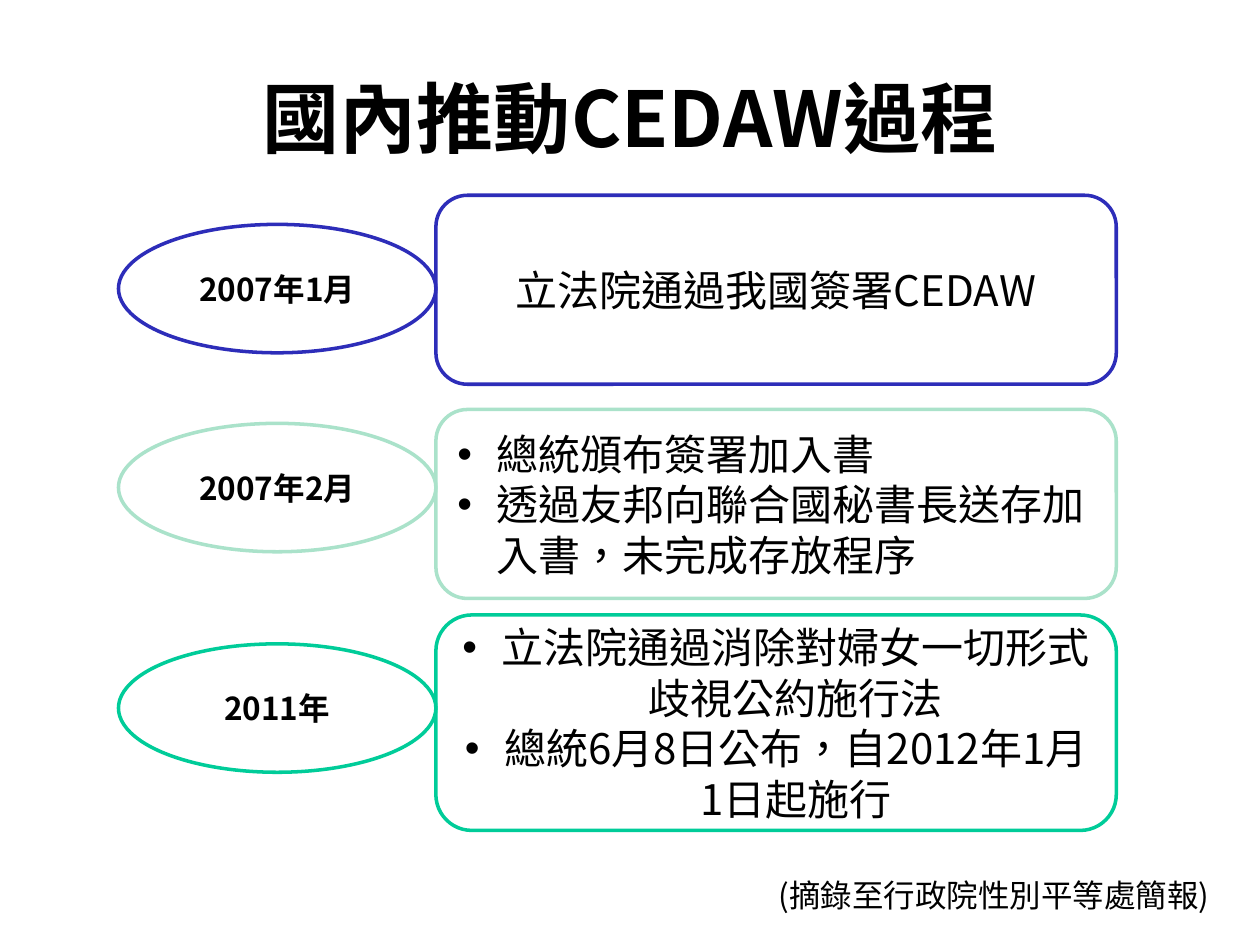
from dataclasses import dataclass

from lxml import etree
from pptx import Presentation
from pptx.dml.color import RGBColor
from pptx.enum.shapes import MSO_SHAPE
from pptx.enum.text import MSO_ANCHOR, MSO_AUTO_SIZE, PP_ALIGN
from pptx.oxml.ns import qn
from pptx.util import Pt

ELLIPSE, ROUNDED = MSO_SHAPE.OVAL, MSO_SHAPE.ROUNDED_RECTANGLE
LEFT, CENTER = PP_ALIGN.LEFT, PP_ALIGN.CENTER
MIDDLE = MSO_ANCHOR.MIDDLE

FONT = "Noto Sans CJK SC"
COLORS = {
    "text": "000000",
    "fill": "FFFFFF",
    "blue": "2D2DB9",
    "mint": "AAE2CA",
    "green": "00CC99",
}

DATE_LEFT, DATE_WIDTH, DATE_HEIGHT = 67.7, 181.4, 73.4
EVENT_LEFT, EVENT_WIDTH = DATE_LEFT + DATE_WIDTH, 388.8
INDENT = 22.5


@dataclass
class Milestone:
    date: str
    date_top: float
    events: list[str]
    top: float
    height: float
    color: str
    align: PP_ALIGN = CENTER
    bulleted: bool = True


MILESTONES = [
    Milestone("2007年1月", 128.2, ["立法院通過我國簽署CEDAW"],
              111.6, 108, "blue", bulleted=False),
    Milestone("2007年2月", 241.9,
              ["總統頒布簽署加入書", "透過友邦向聯合國秘書長送存加入書，未完成存放程序"],
              234, 108, "mint", align=LEFT),
    Milestone("2011年", 367.9,
              ["立法院通過消除對婦女一切形式歧視公約施行法",
               "總統6月8日公布，自2012年1月1日起施行"],
              351.4, 123.1, "green"),
]


def rgb(name: str) -> RGBColor:
    return RGBColor.from_string(COLORS[name])


def add_run(p, text: str, size: float, bold: bool = False) -> None:
    r = p.add_run()
    r.text = text
    r.font.size = Pt(size)
    r.font.bold = bold
    r.font.name = FONT
    r.font.color.rgb = rgb("text")
    rpr = r._r.get_or_add_rPr()
    rpr.set("lang", "zh-TW")
    etree.SubElement(rpr, qn("a:ea")).set("typeface", FONT)


def add_bullet(p) -> None:
    ppr = p._p.get_or_add_pPr()
    ppr.set("marL", str(Pt(INDENT)))
    ppr.set("indent", str(Pt(-INDENT)))
    etree.SubElement(ppr, qn("a:buFont")).set("typeface", "Arial")
    etree.SubElement(ppr, qn("a:buChar")).set("char", "•")


def add_outlined(s, kind: MSO_SHAPE, left: float, top: float, width: float,
                 height: float, color: str):
    """Add a white shape with a coloured outline and return its text frame."""
    sp = s.shapes.add_shape(kind, Pt(left), Pt(top), Pt(width), Pt(height))
    sp.shadow.inherit = False
    sp.fill.solid()
    sp.fill.fore_color.rgb = rgb("fill")
    sp.line.color.rgb = rgb(color)
    sp.line.width = Pt(2)
    tf = sp.text_frame
    tf.word_wrap = True
    tf.vertical_anchor = MIDDLE
    return tf


def add_milestone(s, m: Milestone) -> None:
    tf = add_outlined(s, ROUNDED, EVENT_LEFT, m.top, EVENT_WIDTH, m.height, m.color)
    for i, event in enumerate(m.events):
        p = tf.add_paragraph() if i else tf.paragraphs[0]
        p.alignment = m.align
        if m.bulleted:
            add_bullet(p)
        add_run(p, event, 24)

    tf = add_outlined(s, ELLIPSE, DATE_LEFT, m.date_top, DATE_WIDTH, DATE_HEIGHT, m.color)
    p = tf.paragraphs[0]
    p.alignment = CENTER
    add_run(p, m.date, 18, bold=True)


def add_title(s, text: str) -> None:
    title = s.shapes.title
    title.left, title.top, title.width, title.height = Pt(54), Pt(21.6), Pt(612), Pt(90)
    title.text_frame.vertical_anchor = MIDDLE
    p = title.text_frame.paragraphs[0]
    p.alignment = CENTER
    add_run(p, text, 44, bold=True)


def add_source_note(s, text: str) -> None:
    tf = s.shapes.add_textbox(Pt(437.8), Pt(496.8), Pt(269.3), Pt(28.8)).text_frame
    tf.word_wrap = False
    tf.auto_size = MSO_AUTO_SIZE.SHAPE_TO_FIT_TEXT
    add_run(tf.paragraphs[0], text, 18)


def main() -> None:
    prs = Presentation()
    prs.slide_width, prs.slide_height = Pt(720), Pt(540)
    s = prs.slides.add_slide(prs.slide_layouts.get_by_name("Title Only"))
    add_title(s, "國內推動CEDAW過程")
    for m in MILESTONES:
        add_milestone(s, m)
    add_source_note(s, "(摘錄至行政院性別平等處簡報)")
    prs.save("out.pptx")


if __name__ == "__main__":
    main()
